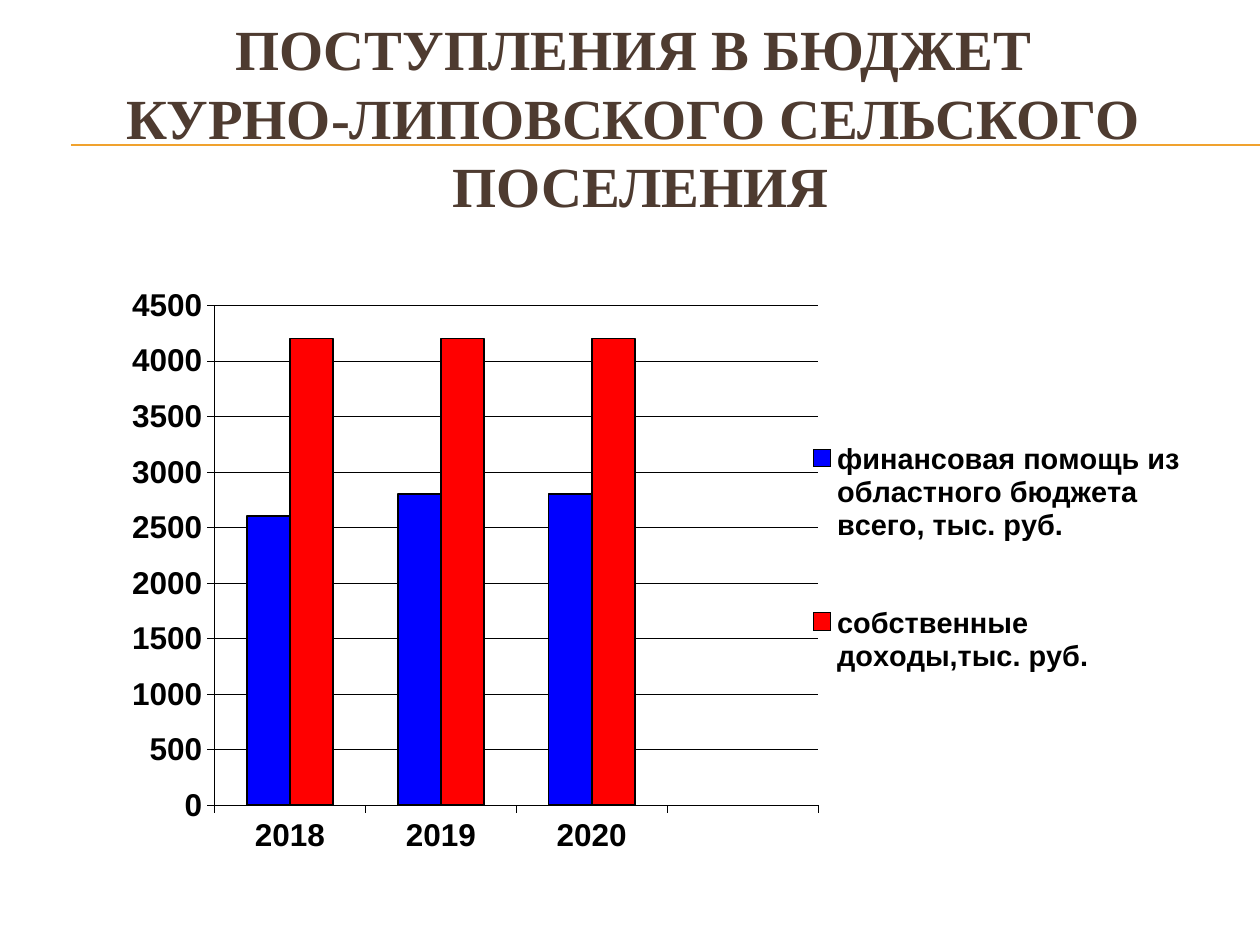
from lxml import etree
from pptx import Presentation
from pptx.chart.data import CategoryChartData
from pptx.dml.color import RGBColor
from pptx.enum import chart as kinds, shapes, text
from pptx.oxml import parse_xml
from pptx.oxml.ns import nsdecls, qn
from pptx.util import Pt

GOLD = RGBColor(0xF0, 0xA2, 0x2E)
BROWN = RGBColor(0x4E, 0x3B, 0x30)
BLACK = RGBColor(0, 0, 0)
BLUE = RGBColor(0, 0, 0xFF)
RED = RGBColor(0xFF, 0, 0)

TITLE = ("ПОСТУПЛЕНИЯ В БЮДЖЕТ \vКУРНО-ЛИПОВСКОГО СЕЛЬСКОГО \v"
         "ПОСЕЛЕНИЯ")
YEARS = ["2018", "2019", "2020", ""]
SERIES = [
    ("финансовая помощь из областного бюджета всего, тыс. руб.",
     (2600, 2800, 2800, None), BLUE),
    ("собственные доходы,тыс. руб.", (4200, 4200, 4200, None), RED),
]


def style(font, name, size, color):
    font.name, font.size, font.bold = name, Pt(size), True
    font.color.rgb = color


def stroke(line, color, width):
    line.color.rgb, line.width = color, Pt(width)


def add_rules(slide, left, top, right):
    """Two thin rules, almost on top of each other."""
    for y in (top, top + 0.3):
        rule = slide.shapes.add_connector(
            shapes.MSO_CONNECTOR.STRAIGHT, Pt(left), Pt(y), Pt(right), Pt(y))
        stroke(rule.line, GOLD, 0.75)
        etree.SubElement(rule._element.spPr, qn("a:effectLst"))


def add_title(slide, left, top, width, height):
    title = slide.shapes.title
    title.left, title.top = Pt(left), Pt(top)
    title.width, title.height = Pt(width), Pt(height)
    frame = title.text_frame
    frame.text = TITLE
    frame.word_wrap = True
    frame.auto_size = text.MSO_AUTO_SIZE.NONE
    frame.vertical_anchor = text.MSO_ANCHOR.MIDDLE
    frame.margin_bottom = Pt(42.6)  # lifts the lines above the middle
    para = frame.paragraphs[0]
    para.alignment = text.PP_ALIGN.CENTER
    para.line_spacing = 1.0
    for run in para.runs:
        style(run.font, "Times New Roman", 32.4, BROWN)


def set_place(part, x, y, w, h, inner=False):
    """Place the plot area or legend, in fractions of the chart."""
    for old in part.findall(qn("c:layout")):
        part.remove(old)
    target = '<c:layoutTarget val="inner"/>' if inner else ""
    layout = parse_xml(
        f'<c:layout {nsdecls("c")}><c:manualLayout>{target}'
        '<c:xMode val="edge"/><c:yMode val="edge"/>'
        f'<c:x val="{x}"/><c:y val="{y}"/><c:w val="{w}"/><c:h val="{h}"/>'
        '</c:manualLayout></c:layout>')
    part.insert(0 if inner else 1, layout)


def add_bars(slide, left, top, width, height):
    data = CategoryChartData()
    data.categories = YEARS
    for name, vals, _ in SERIES:
        data.add_series(name, vals)
    chart = slide.shapes.add_chart(
        kinds.XL_CHART_TYPE.COLUMN_CLUSTERED,
        Pt(left), Pt(top), Pt(width), Pt(height), data).chart
    chart.has_title = False
    style(chart.font, "Arial", 18, BLACK)

    # Columns
    plot = chart.plots[0]
    plot.gap_width, plot.overlap = 150, 0
    plot.vary_by_categories = False
    for bars, (_, _, color) in zip(plot.series, SERIES):
        bars.format.fill.solid()
        bars.format.fill.fore_color.rgb = color
        stroke(bars.format.line, BLACK, 1)

    # Axes
    for axis in (chart.category_axis, chart.value_axis):
        axis.major_tick_mark = kinds.XL_TICK_MARK.OUTSIDE
        axis.minor_tick_mark = kinds.XL_TICK_MARK.NONE
        style(axis.tick_labels.font, "Arial", 18, BLACK)
        stroke(axis.format.line, BLACK, 0.25)
    chart.category_axis.tick_label_position = kinds.XL_TICK_LABEL_POSITION.LOW
    scale = chart.value_axis
    scale.minimum_scale, scale.maximum_scale = 0, 4500
    scale.major_unit = 500
    scale.has_major_gridlines = True
    stroke(scale.major_gridlines.format.line, BLACK, 0.25)

    # Legend
    chart.has_legend = True
    key = chart.legend
    key.position = kinds.XL_LEGEND_POSITION.RIGHT
    key.include_in_layout = False
    style(key.font, "Arial", 16.5, BLACK)

    area = chart._chartSpace.chart.plotArea
    set_place(area, 0.12, 0.05, 0.54, 0.82, inner=True)
    set_place(key._element, 0.65, 0.17, 0.34, 0.59)


def main():
    deck = Presentation()
    deck.slide_width, deck.slide_height = Pt(720), Pt(540)
    slide = deck.slides.add_slide(deck.slide_layouts[5])
    add_rules(slide, 40.5, 82.8, 720)
    add_title(slide, 24, 36, 684, 100)
    add_bars(slide, 46, 157, 638.5, 348.5)
    deck.save("out.pptx")


if __name__ == "__main__":
    main()
